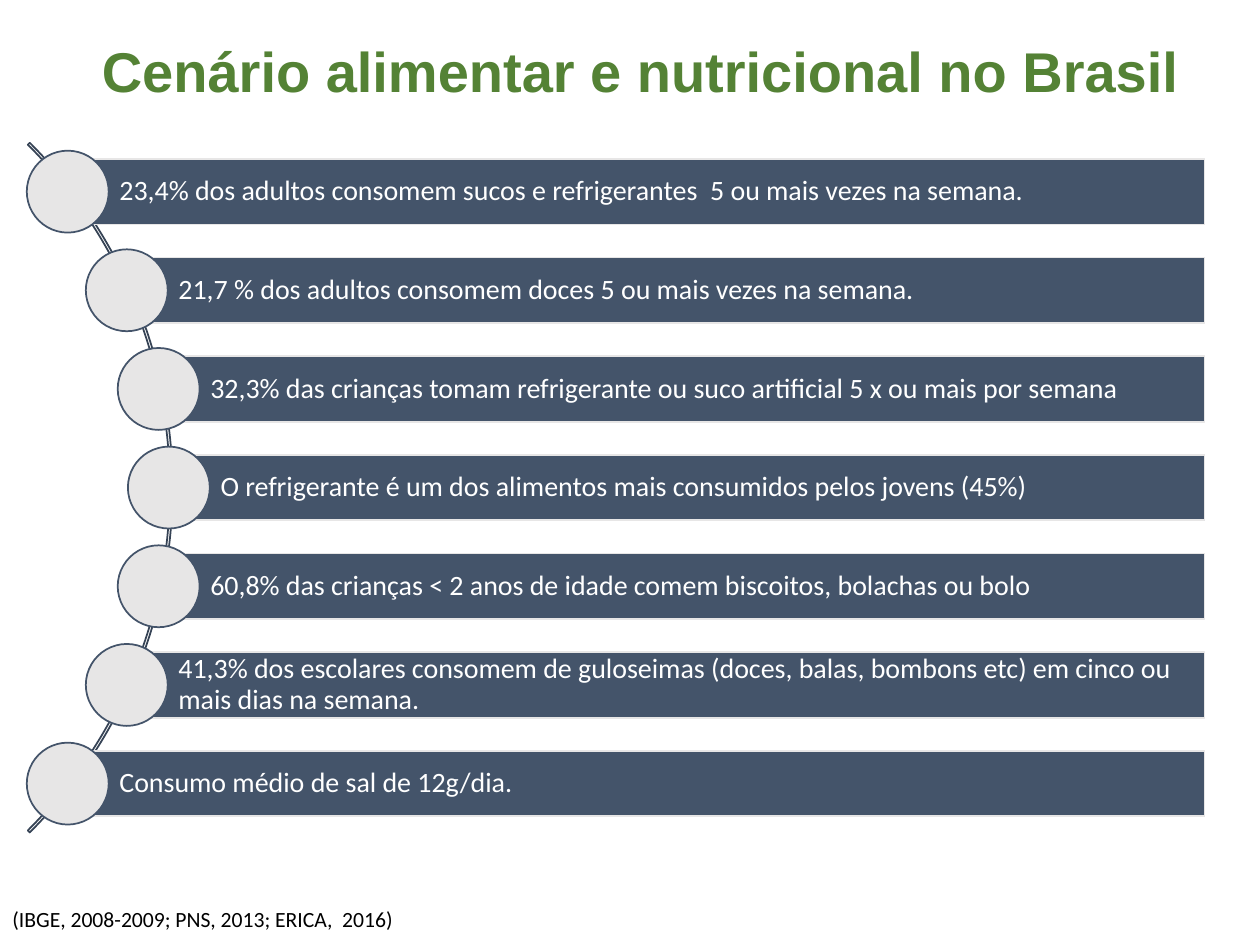
from math import sqrt
from pptx import Presentation
from pptx.dml.color import RGBColor
from pptx.enum.shapes import MSO_SHAPE
from pptx.enum.text import MSO_ANCHOR, PP_ALIGN
from pptx.util import Inches, Pt

ARC, RECT, OVAL = MSO_SHAPE.BLOCK_ARC, MSO_SHAPE.RECTANGLE, MSO_SHAPE.OVAL
MID, LEFT = MSO_ANCHOR.MIDDLE, PP_ALIGN.LEFT

deck = Presentation()
deck.slide_width, deck.slide_height = Inches(10), Inches(7.5)
COL, ROW = deck.slide_width / 100, deck.slide_height / 75
slide = deck.slides.add_slide(deck.slide_layouts[6])


def draw(kind, x, y, w, h, fill, line):
    box = [int(x * COL), int(y * ROW), int(w * COL), int(h * ROW)]
    if kind is None:
        return slide.shapes.add_textbox(*box)
    shape = slide.shapes.add_shape(kind, *box)
    shape.shadow.inherit = False
    if fill:
        shape.fill.solid()
        shape.fill.fore_color.rgb = RGBColor.from_string(fill)
    else:
        shape.fill.background()
    shape.line.color.rgb = RGBColor.from_string(line)
    shape.line.width = Pt(1)
    return shape


def write(shape, text, size, name, color, bold=False):
    frame = shape.text_frame
    frame.text = text
    frame.word_wrap = True
    para = frame.paragraphs[0]
    para.alignment = LEFT
    font = para.runs[0].font
    font.size, font.name, font.bold = Pt(size), name, bold
    font.color.rgb = RGBColor.from_string(color)
    return frame


note = draw(None, 0, 71.4, 36.5, 3.6, None, None)
write(note, "(IBGE, 2008-2009; PNS, 2013; ERICA,  2016)", 12.4, "Calibri", "000000")
title = draw(None, 7.1, 2.4, 89.3, 8.7, None, None)
write(title, "Cenário alimentar e nutricional no Brasil", 32, "Arial", "548235", True)

HUB, AXIS, RAD = -25, 38.7, 38.4
STEP, BAR, DOT, EDGE = 7.83, 5.2, 6.5, 95.6

arc = draw(ARC, HUB - AXIS, 0, 2 * AXIS, 2 * AXIS, None, "364355")
for i, value in enumerate((189, 27, 0.0028)):
    arc.adjustments[i] = value

facts = [
    "23,4% dos adultos consomem sucos e refrigerantes  5 ou mais vezes na semana.",
    "21,7 % dos adultos consomem doces 5 ou mais vezes na semana.",
    "32,3% das crianças tomam refrigerante ou suco artificial 5 x ou mais por semana",
    "O refrigerante é um dos alimentos mais consumidos pelos jovens (45%)",
    "60,8% das crianças < 2 anos de idade comem biscoitos, bolachas ou bolo",
    "41,3% dos escolares consomem de guloseimas (doces, balas, bombons etc) "
    "em cinco ou mais dias na semana.",
    "Consumo médio de sal de 12g/dia.",
]
for i, fact in enumerate(facts):
    drop = (i - len(facts) // 2) * STEP
    x, y = HUB + sqrt(RAD ** 2 - drop ** 2), AXIS + drop
    bar = draw(RECT, x, y - BAR / 2, EDGE - x, BAR, "44546A", "E7E6E6")
    frame = write(bar, fact, 16, "Calibri", "FFFFFF")
    frame.vertical_anchor = MID
    frame.margin_left = int(4.1 * COL)
    frame.margin_right = frame.margin_top = frame.margin_bottom = int(0.4 * COL)
    frame.paragraphs[0].line_spacing = 0.9
    draw(OVAL, x - DOT / 2, y - DOT / 2, DOT, DOT, "E7E6E6", "44546A")

deck.save("out.pptx")
